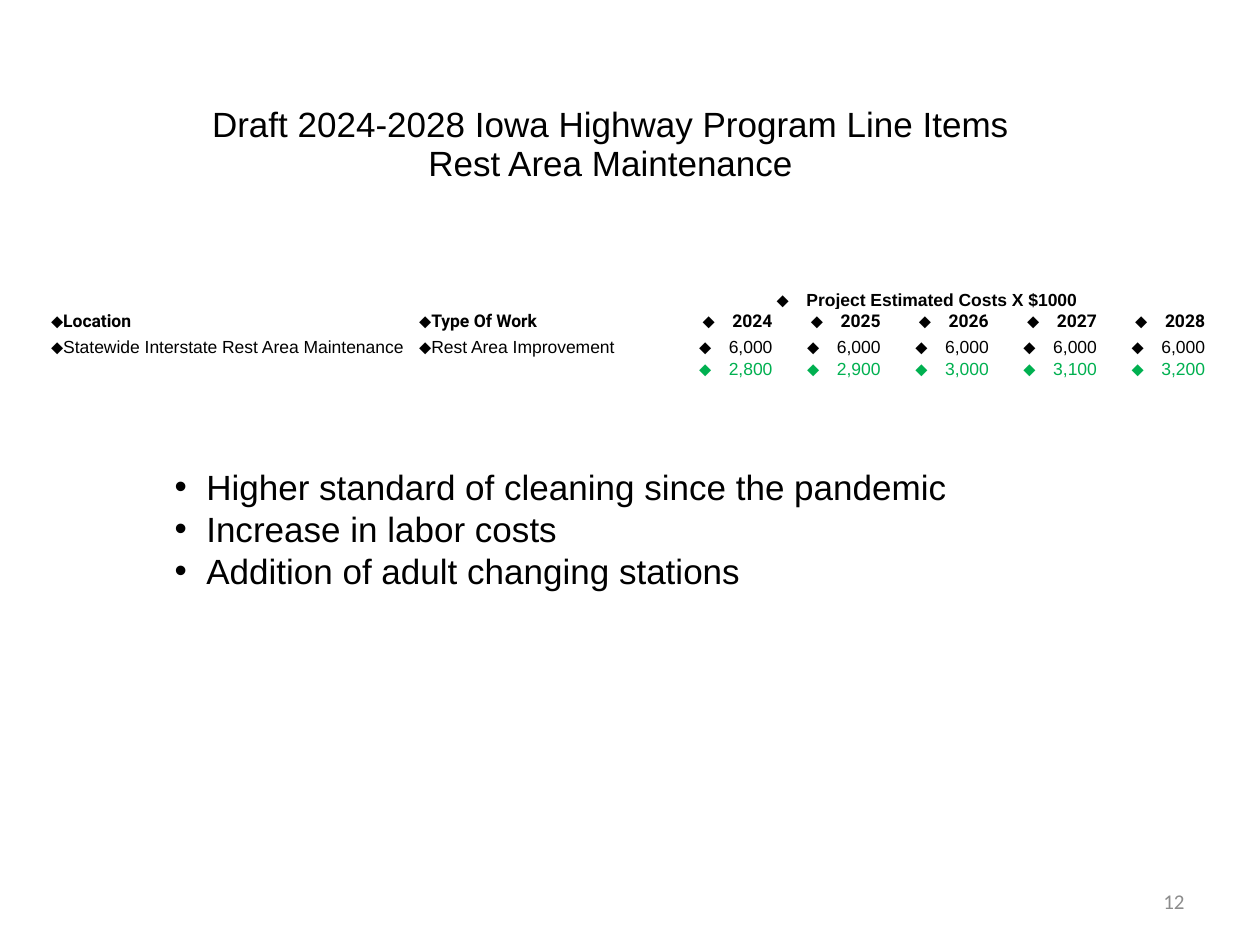
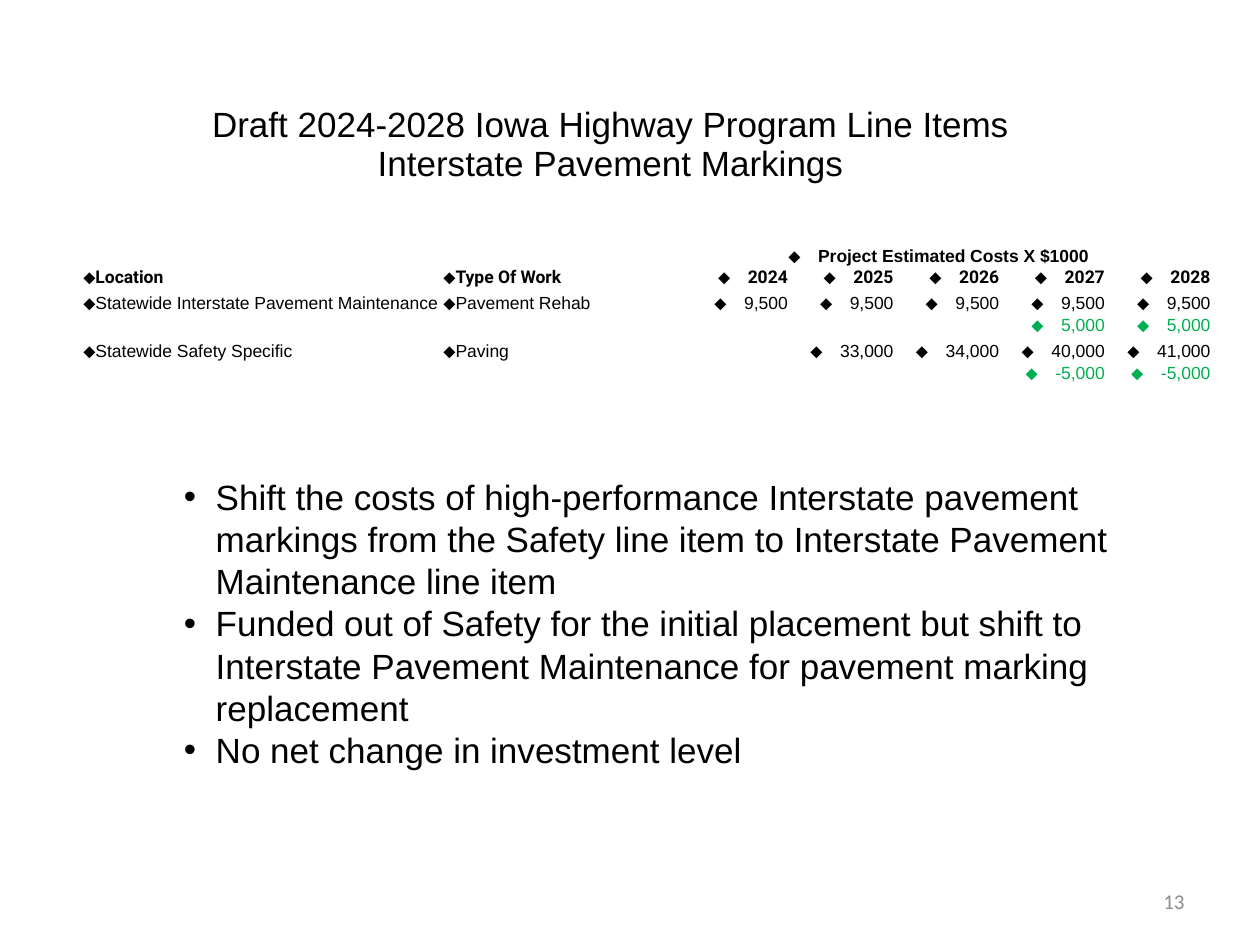
"""Builds two slides on draft highway program line items."""
from pptx import Presentation
from pptx.dml.color import RGBColor
from pptx.enum.text import MSO_ANCHOR, PP_ALIGN
from pptx.oxml.xmlchemy import OxmlElement
from pptx.util import Cm, Pt

LEFT, CENTER, RIGHT = PP_ALIGN.LEFT, PP_ALIGN.CENTER, PP_ALIGN.RIGHT
TOP, MIDDLE, BOTTOM = MSO_ANCHOR.TOP, MSO_ANCHOR.MIDDLE, MSO_ANCHOR.BOTTOM

COLORS = {"text": "000000", "change": "00B050", "number": "8C8C8C", "paper": "FFFFFF"}
PROGRAM = "Draft 2024-2028 Iowa Highway Program Line Items"
YEARS = ["2024", "2025", "2026", "2027", "2028"]
ROW_HEIGHTS = {"header": 0.53, "base": 0.36, "change": 0.53}


def write_text(para, text, size=20, font="Arial", color="text", bold=False,
               align=LEFT, spacing=None, before=None, bullet=None, indent=0, hang=0):
    """Write one formatted paragraph."""
    para.alignment = align
    if spacing is not None:
        para.line_spacing = spacing
    if before is not None:
        para.space_before = Pt(before)
    span = para.add_run()
    span.text = text
    span.font.size = Pt(size)
    span.font.name = font
    span.font.bold = bold
    span.font.color.rgb = RGBColor.from_string(COLORS[color])
    if bullet:
        properties = para._p.get_or_add_pPr()
        properties.set("marL", str(Cm(indent)))
        properties.set("indent", str(-Cm(hang)))
        for tag, name, value in (("a:buFont", "typeface", "Arial"), ("a:buChar", "char", bullet)):
            mark = OxmlElement(tag)
            mark.set(name, value)
            properties.append(mark)


class LineItemDeck:
    """Holds the deck, its style and the current slide."""

    def __init__(self):
        """Start an empty deck."""
        self.deck = Presentation()
        self.deck.slide_width, self.deck.slide_height = Cm(25.4), Cm(19.05)
        self.page = None

    def add_page(self, topic, number):
        """Add a slide with its title and number."""
        self.page = self.deck.slides.add_slide(self.deck.slide_layouts[5])
        title = self.page.shapes.title
        title.left, title.top, title.width, title.height = Cm(-0.39), Cm(2.31), Cm(25.4), Cm(2.44)
        title.text_frame.vertical_anchor = TOP
        self.fill_frame(title.text_frame, [PROGRAM, topic], align=CENTER, spacing=0.5, before=10.2)
        self.add_text([number], 18.21, 17.65, 5.92, 1.02, anchor=MIDDLE,
                      size=12, font="Calibri", color="number", align=RIGHT)

    def fill_frame(self, frame, lines, **style):
        """Write one paragraph per line."""
        frame.word_wrap = True
        for index, line in enumerate(lines):
            para = frame.add_paragraph() if index else frame.paragraphs[0]
            write_text(para, line, **style)

    def add_text(self, lines, left, top, width, height, anchor=TOP, **style):
        """Add a text box."""
        box = self.page.shapes.add_textbox(Cm(left), Cm(top), Cm(width), Cm(height))
        box.text_frame.vertical_anchor = anchor
        self.fill_frame(box.text_frame, lines, **style)

    def add_bullets(self, lines, left, top, height):
        """Add the list of reasons."""
        self.add_text(lines, left, top, 20.8, height, bullet="•", indent=1.91, hang=0.64)

    def add_costs(self, items, left, top, location_width, work_width, year_width):
        """Add the cost table from rows of kind and texts."""
        rows = [("header", ["", "", "Project Estimated Costs X $1000"] + [""] * 4),
                ("header", ["Location", "Type Of Work"] + YEARS)] + items
        widths = [location_width, work_width] + [year_width] * len(YEARS)
        heights = [ROW_HEIGHTS[kind] for kind, _ in rows]
        table = self.page.shapes.add_table(len(rows), len(widths), Cm(left), Cm(top),
                                           Cm(sum(widths)), Cm(sum(heights))).table
        table.first_row = table.horz_banding = False
        for column, width in zip(table.columns, widths):
            column.width = Cm(width)
        for index, (kind, texts) in enumerate(rows):
            table.rows[index].height = Cm(heights[index])
            for place, text in enumerate(texts):
                self.fill_cell(table.cell(index, place), text,
                               font="Roboto" if index == 1 else "Arial",
                               bold=kind == "header",
                               color="change" if kind == "change" else "text",
                               align=LEFT if place < 2 else RIGHT if index else CENTER)
        table.cell(0, 2).merge(table.cell(0, len(widths) - 1))
        table.cell(0, 2).vertical_anchor = BOTTOM

    def fill_cell(self, cell, text, **style):
        """Style one cell and write its text."""
        cell.fill.solid()
        cell.fill.fore_color.rgb = RGBColor.from_string(COLORS["paper"])
        cell.margin_left = cell.margin_right = cell.margin_top = Cm(0.02)
        cell.margin_bottom = 0
        para = cell.text_frame.paragraphs[0]
        if text:
            write_text(para, text, size=10, before=2, bullet="⬥", hang=0.6, **style)
        else:
            ending = OxmlElement("a:endParaRPr")
            ending.set("sz", "1000")
            para._p.append(ending)


def main():
    """Build and save the deck."""
    show = LineItemDeck()

    show.add_page("Rest Area Maintenance", "12")
    show.add_costs([
        ("base", ["Statewide Interstate Rest Area Maintenance", "Rest Area Improvement"]
         + ["6,000"] * 5),
        ("change", ["", "", "2,800", "2,900", "3,000", "3,100", "3,200"]),
    ], 1.01, 5.72, 7.42, 4.98, 2.18)
    show.add_bullets([
        "Higher standard of cleaning since the pandemic",
        "Increase in labor costs",
        "Addition of adult changing stations",
    ], 2, 9.25, 3.68)

    show.add_page("Interstate Pavement Markings", "13")
    show.add_costs([
        ("base", ["Statewide Interstate Pavement Maintenance", "Pavement Rehab"]
         + ["9,500"] * 5),
        ("change", [""] * 5 + ["5,000"] * 2),
        ("base", ["Statewide Safety Specific", "Paving", "",
                  "33,000", "34,000", "40,000", "41,000"]),
        ("change", [""] * 5 + ["-5,000"] * 2),
    ], 1.66, 4.84, 7.26, 4.85, 2.13)
    show.add_bullets([
        "Shift the costs of high-performance Interstate pavement markings from the Safety "
        "line item to Interstate Pavement Maintenance line item",
        "Funded out of Safety for the initial placement but shift to Interstate Pavement "
        "Maintenance for pavement marking replacement",
        "No net change in investment level",
    ], 2.19, 9.47, 6.25)

    show.deck.save("out.pptx")


if __name__ == "__main__":
    main()
